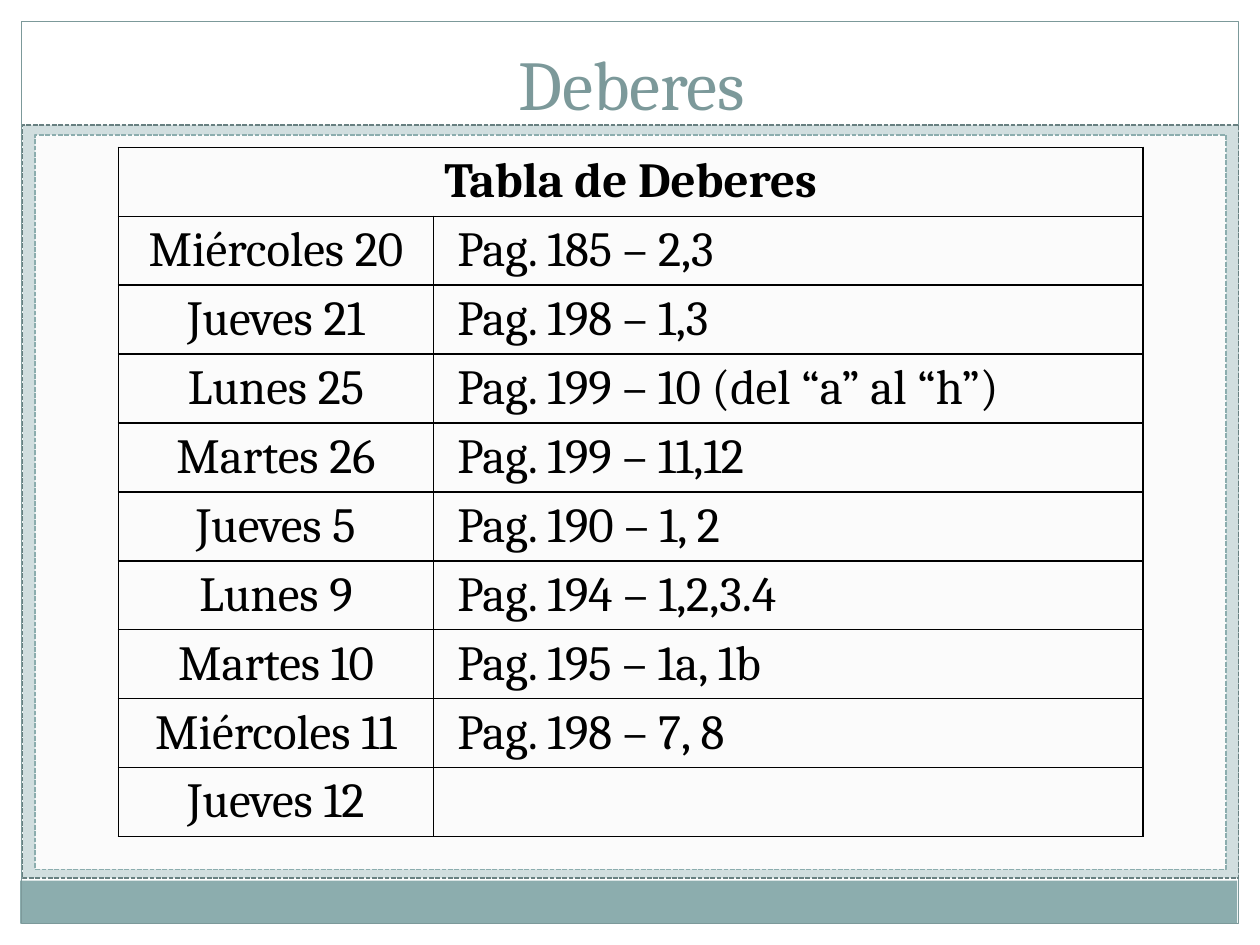
"""Build the homework table slide."""
import lxml.etree
import pptx
import pptx.dml.color
import pptx.enum.dml
import pptx.enum.shapes
import pptx.enum.text
import pptx.oxml.ns
import pptx.util

Inches, Pt = pptx.util.Inches, pptx.util.Pt
RGBColor = pptx.dml.color.RGBColor
PP_ALIGN, MSO_ANCHOR = pptx.enum.text.PP_ALIGN, pptx.enum.text.MSO_ANCHOR
SQUARE_DOT = pptx.enum.dml.MSO_LINE.SQUARE_DOT
qn = pptx.oxml.ns.qn

FONT = "Cambria"
BLACK = RGBColor(0x00, 0x00, 0x00)
TEAL = RGBColor(0x8C, 0xAD, 0xAE)
SLATE = RGBColor(0x7C, 0x99, 0x9A)
DARK_SLATE = RGBColor(0x68, 0x80, 0x81)
PALE_TEAL = RGBColor(0xD1, 0xDE, 0xDF)
OFF_WHITE = RGBColor(0xFB, 0xFB, 0xFB)

HOMEWORK = [
    ("Miércoles 20", "Pag. 185 – 2,3"),
    ("Jueves 21", "Pag. 198 – 1,3"),
    ("Lunes 25", "Pag. 199 – 10 (del “a” al “h”)"),
    ("Martes 26", "Pag. 199 – 11,12"),
    ("Jueves 5", "Pag. 190 – 1, 2"),
    ("Lunes 9", "Pag. 194 – 1,2,3.4"),
    ("Martes 10", "Pag. 195 – 1a, 1b"),
    ("Miércoles 11", "Pag. 198 – 7, 8"),
    ("Jueves 12", ""),
]


def add_panel(s, box, fill=None, line=None, width=0.75, dash=None):
    panel = s.shapes.add_shape(
        pptx.enum.shapes.MSO_SHAPE.RECTANGLE, *map(Inches, box))
    panel.shadow.inherit = False
    if fill is None:
        panel.fill.background()
    else:
        panel.fill.solid()
        panel.fill.fore_color.rgb = fill
    if line is None:
        panel.line.fill.background()
    else:
        panel.line.color.rgb = line
        panel.line.width = Pt(width)
        panel.line.dash_style = dash


def style_text(p, size, color, align, bold=False):
    p.alignment = align
    for r in p.runs:
        r.font.name = FONT
        r.font.size = Pt(size)
        r.font.bold = bold
        r.font.color.rgb = color


def set_title(s, text):
    title = s.shapes.title
    title.left, title.top = Inches(0.35), Inches(0.21)
    title.width, title.height = Inches(9.33), Inches(0.83)
    tf = title.text_frame
    tf.text = text
    tf.vertical_anchor = MSO_ANCHOR.BOTTOM
    style_text(tf.paragraphs[0], 40, SLATE, PP_ALIGN.CENTER)


def set_borders(cell):
    props = cell._tc.get_or_add_tcPr()
    for side in ("a:lnL", "a:lnR", "a:lnT", "a:lnB"):
        ln = lxml.etree.SubElement(props, qn(side), w=str(Pt(1)))
        fill = lxml.etree.SubElement(ln, qn("a:solidFill"))
        lxml.etree.SubElement(fill, qn("a:srgbClr"), val=str(BLACK))


def fill_cell(cell, text, align, bold=False):
    set_borders(cell)
    cell.fill.background()
    cell.margin_top = cell.margin_bottom = 0
    if align == PP_ALIGN.LEFT:
        cell.margin_left = Inches(0.19)
    cell.vertical_anchor = MSO_ANCHOR.MIDDLE
    cell.text = text
    style_text(cell.text_frame.paragraphs[0], 28, BLACK, align, bold)


def add_homework_table(s, heading, entries):
    rows = [(heading, "")] + entries
    table = s.shapes.add_table(
        len(rows), 2, Inches(0.94), Inches(1.17), Inches(8.13), Inches(5.47)).table
    table.first_row = table.horz_banding = False
    table.columns[0].width = Inches(2.5)
    table.columns[1].width = Inches(5.63)
    table.cell(0, 0).merge(table.cell(0, 1))
    for i, (day, task) in enumerate(rows):
        fill_cell(table.cell(i, 0), day, PP_ALIGN.CENTER, bold=i == 0)
        fill_cell(table.cell(i, 1), task, PP_ALIGN.LEFT)


def main():
    prs = pptx.Presentation()
    prs.slide_width, prs.slide_height = Inches(10), Inches(7.5)
    s = prs.slides.add_slide(prs.slide_layouts[5])
    add_panel(s, (0.16, 6.99, 9.66, 0.34), fill=TEAL)
    add_panel(s, (0.17, 0.17, 9.66, 7.16), line=SLATE)
    add_panel(s, (0.18, 0.99, 9.65, 5.98), PALE_TEAL, DARK_SLATE, 0.9, SQUARE_DOT)
    add_panel(s, (0.28, 1.07, 9.45, 5.83), OFF_WHITE, TEAL, 0.9, SQUARE_DOT)
    set_title(s, "Deberes")
    add_homework_table(s, "Tabla de Deberes", HOMEWORK)
    prs.save("out.pptx")


if __name__ == "__main__":
    main()
